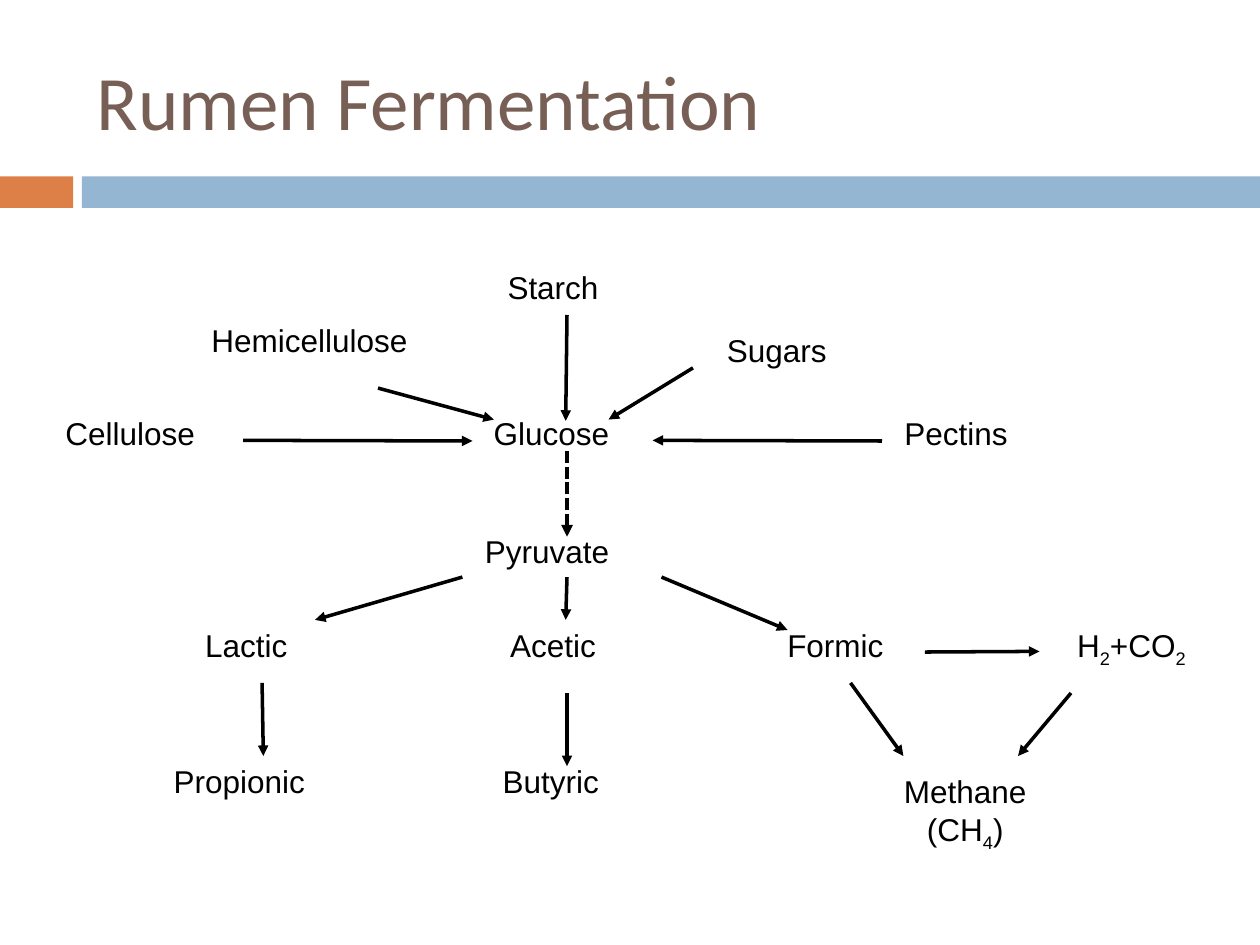
from dataclasses import dataclass
from itertools import groupby

from lxml.etree import SubElement
from pptx import Presentation
from pptx.dml.color import RGBColor
from pptx.enum.dml import MSO_LINE
from pptx.enum.shapes import MSO_CONNECTOR, MSO_SHAPE
from pptx.enum.text import MSO_ANCHOR, PP_ALIGN
from pptx.oxml.ns import qn
from pptx.util import Emu, Pt

EMU_PER_PX = 9144  # 100 px to the inch
TOP, LEFT, BOTTOM, RIGHT = range(4)


@dataclass(frozen=True)
class Theme:
    title_color: str = "775F55"
    ink: str = "000000"
    accent: str = "DD8047"
    band: str = "94B6D2"
    title_font: str = "Calibri"
    body_font: str = "Arial"
    title_size: float = 44
    body_size: float = 18
    arrow_width: float = 2
    dashed_width: float = 2.25


def px(length):
    return Emu(length * EMU_PER_PX)


class SlideBuilder:
    def __init__(self, slide, theme):
        self.slide = slide
        self.theme = theme

    def bar(self, left, top, width, height, color):
        shape = self.slide.shapes.add_shape(
            MSO_SHAPE.RECTANGLE, *map(px, (left, top, width, height)))
        shape.shadow.inherit = False
        shape.fill.solid()
        shape.fill.fore_color.rgb = RGBColor.from_string(color)
        shape.line.fill.background()

    def text_box(self, box, lines, font, size, color,
                 align=PP_ALIGN.LEFT, anchor=MSO_ANCHOR.TOP):
        shape = self.slide.shapes.add_textbox(*map(px, box))
        frame = shape.text_frame
        frame.word_wrap = True
        frame.vertical_anchor = anchor
        for index, line in enumerate(lines):
            paragraph = frame.add_paragraph() if index else frame.paragraphs[0]
            paragraph.alignment = align
            # Digits in a formula are subscripts
            for is_digit, letters in groupby(line, str.isdigit):
                run = paragraph.add_run()
                run.text = "".join(letters)
                run.font.name = font
                run.font.size = Pt(size)
                run.font.color.rgb = RGBColor.from_string(color)
                if is_digit:
                    run.font._element.set("baseline", "-25000")
        return shape

    def title(self, box, text):
        theme = self.theme
        self.text_box(box, [text], theme.title_font, theme.title_size,
                      theme.title_color, anchor=MSO_ANCHOR.MIDDLE)

    def label(self, box, *lines, align=PP_ALIGN.LEFT):
        theme = self.theme
        return self.text_box(box, lines, theme.body_font, theme.body_size,
                             theme.ink, align)

    def arrow(self, start, end, source=None, target=None, dashed=False):
        theme = self.theme
        connector = self.slide.shapes.add_connector(
            MSO_CONNECTOR.STRAIGHT, *map(px, start + end))
        if source:
            connector.begin_connect(*source)
        if target:
            connector.end_connect(*target)
        line = connector.line
        line.color.rgb = RGBColor.from_string(theme.ink)
        line.width = Pt(theme.dashed_width if dashed else theme.arrow_width)
        if dashed:
            line.dash_style = MSO_LINE.SQUARE_DOT
        properties = connector._element.spPr
        SubElement(properties.find(qn("a:ln")), qn("a:tailEnd"), type="triangle")
        SubElement(properties, qn("a:effectLst"))


def main():
    presentation = Presentation()
    presentation.slide_width, presentation.slide_height = px(1000), px(750)
    slide = presentation.slides.add_slide(presentation.slide_layouts[6])
    theme = Theme()
    builder = SlideBuilder(slide, theme)

    # Header
    builder.bar(0, 140, 58, 25, theme.accent)
    builder.bar(65, 140, 935, 25, theme.band)
    builder.title((67, 25, 892, 108), "Rumen Fermentation")

    # One-line labels: left, top, width
    label_height = 51
    labels = {
        name: builder.label((left, top, width, label_height), name)
        for name, left, top, width in (
            ("Cellulose", 42, 324, 151),
            ("Glucose", 382, 324, 136),
            ("Pyruvate", 375, 417, 149),
            ("Hemicellulose", 158, 250, 223),
            ("Starch", 393, 208, 114),
            ("Sugars", 567, 258, 121),
            ("Pectins", 708, 324, 124),
            ("Lactic", 153, 492, 105),
            ("Acetic", 395, 492, 108),
            ("Formic", 615, 492, 119),
            ("Butyric", 389, 600, 122),
            ("Propionic", 128, 600, 156),
        )
    }

    # Gases
    builder.label((830, 492, 136, 77), "H2+CO2", align=PP_ALIGN.CENTER)
    builder.label((692, 608, 148, 91), "Methane", "(CH4)",
                  align=PP_ALIGN.CENTER)

    # Arrows joined to a label
    builder.arrow((193, 350), (375, 350), source=(labels["Cellulose"], RIGHT))
    builder.arrow((700, 350), (518, 350), target=(labels["Glucose"], RIGHT))
    builder.arrow((450, 458), (450, 492), target=(labels["Acetic"], TOP))
    builder.arrow((733, 517), (825, 517), source=(labels["Formic"], RIGHT))

    # Free arrows
    for start, end in (
        ((300, 308), (392, 333)),  # Hemicellulose to glucose
        ((450, 250), (449, 334)),  # Starch to glucose
        ((550, 292), (483, 333)),  # Sugars to glucose
        ((367, 458), (250, 492)),  # Pyruvate to lactic
        ((525, 458), (625, 500)),  # Pyruvate to formic
        ((208, 542), (209, 600)),  # Lactic to propionic
        ((450, 550), (450, 608)),  # Acetic to butyric
        ((675, 542), (717, 600)),  # Formic to methane
        ((850, 550), (808, 600)),  # Gases to methane
    ):
        builder.arrow(start, end)
    builder.arrow((450, 358), (450, 426), dashed=True)  # Glucose to pyruvate

    presentation.save("out.pptx")


if __name__ == "__main__":
    main()
